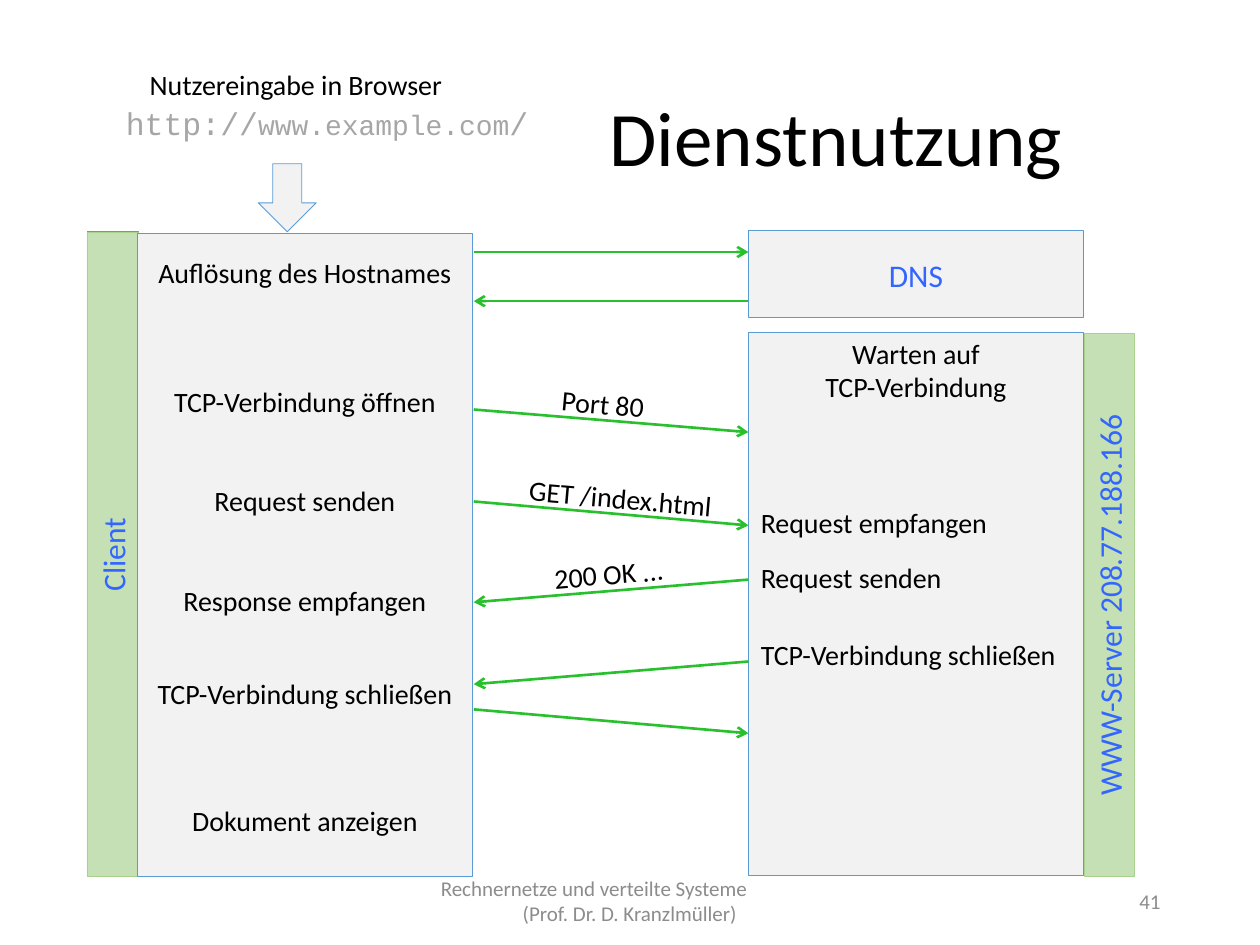
from pptx import Presentation
from pptx.dml.color import RGBColor
from pptx.enum.shapes import MSO_CONNECTOR as Link, MSO_SHAPE as Shape
from pptx.enum.text import MSO_ANCHOR as Anchor, MSO_AUTO_SIZE as Fit, PP_ALIGN as Align
from pptx.oxml.ns import qn
from pptx.util import Inches, Pt
from lxml.etree import SubElement

COLORS = {
    "black": "000000", "blue": "3366FF", "gray": "A6A6A6", "foot": "8C8C8C",
    "panel": "F2F2F2", "edge": "5B9BD5", "bar": "C5E0B4", "rim": "A9D18E",
    "arrow": "29C02E",
}
LEFT, RIGHT, COL = 1.09, 5.94, 2.66
GAP = 3.76
LINE_H = 0.37

# text, left indent
FOOT = [
    ("Rechnernetze und verteilte Systeme", 0.09),
    ("(Prof. Dr. D. Kranzlmüller)", 0.74),
]
PANELS = [
    (Shape.RECTANGLE, 0.69, 1.84, 0.41, 5.11),
    (Shape.RECTANGLE, LEFT, 1.85, COL, 5.11),
    (Shape.DOWN_ARROW, 2.05, 1.3, 0.46, 0.54),
    (Shape.RECTANGLE, RIGHT, 2.64, COL, 4.31),
    (Shape.RECTANGLE, RIGHT, 1.83, COL, 0.69),
]
BARS = [
    ("Client", -1.66, 4.2, 5.11, 0.4),
    ("WWW-Server 208.77.188.166", 6.65, 4.6, 4.31, 0.4),
]
CLIENT = [
    ("Auflösung des Hostnames", 1.98),
    ("TCP-Verbindung öffnen", 3),
    ("Request senden", 3.79),
    ("Response empfangen", 4.58),
    ("TCP-Verbindung schließen", 5.32),
    ("Dokument anzeigen", 6.33),
]
SERVER = [
    ("Request empfangen", 3.96),
    ("Request senden", 4.4),
    ("TCP-Verbindung schließen", 5.01),
]
LABELS = [
    ("Port 80", 4.36, 3.02, 0.87, 5.2),
    ("GET /index.html", 4.1, 3.77, 1.68, 5),
    ("200 OK ...", 4.3, 4.37, 1.08, 355.4),
]
# start height, end height, runs towards the server
ARROWS = [
    (2, 2, True), (2.39, 2.39, False), (3.25, 3.43, True), (3.98, 4.17, True),
    (4.6, 4.78, False), (5.25, 5.43, False), (5.63, 5.82, True),
]


def rgb(name):
    return RGBColor.from_string(COLORS[name])


def write(shape, lines, size=16, color="black", align=Align.LEFT,
          font="Calibri", **frame):
    """Fill a shape with lines; a line is a string or a list of (text, size)."""
    box = shape.text_frame
    form = {"word_wrap": True, "auto_size": Fit.SHAPE_TO_FIT_TEXT,
            "vertical_anchor": Anchor.TOP, **frame}
    for key, value in form.items():
        setattr(box, key, value)
    for i, line in enumerate(lines):
        para = box.add_paragraph() if i else box.paragraphs[0]
        para.alignment = align
        for text, pts in [(line, size)] if isinstance(line, str) else line:
            run = para.add_run()
            run.text = text
            run.font.name, run.font.size = font, Pt(pts)
            run.font.color.rgb = rgb(color)
    return box


def add_text(slide, lines, x, y, w, h, turn=0, **form):
    shape = slide.shapes.add_textbox(*map(Inches, (x, y, w, h)))
    shape.rotation = turn
    return write(shape, lines, **form)


def add_panel(slide, kind, x, y, w, h, fill="panel", edge="edge", width=0.5):
    shape = slide.shapes.add_shape(kind, *map(Inches, (x, y, w, h)))
    shape.shadow.inherit = False
    shape.fill.solid()
    shape.fill.fore_color.rgb = rgb(fill)
    shape.line.color.rgb = rgb(edge)
    shape.line.width = Pt(width)
    return shape


def add_arrow(slide, start, end, ahead):
    x1, x2 = (GAP, RIGHT) if ahead else (RIGHT, GAP)
    arrow = slide.shapes.add_connector(
        Link.STRAIGHT, *map(Inches, (x1, start, x2, end)))
    arrow.line.color.rgb = rgb("arrow")
    arrow.line.width = Pt(1.5)
    SubElement(arrow.line._get_or_add_ln(), qn("a:tailEnd"), type="arrow")
    SubElement(arrow._element.spPr, qn("a:effectLst"))


def main():
    deck = Presentation()
    deck.slide_width, deck.slide_height = Inches(10), Inches(7.5)
    slide = deck.slides.add_slide(deck.slide_layouts[6])
    fixed = {"auto_size": Fit.NONE, "vertical_anchor": Anchor.MIDDLE}

    title = add_text(slide, ["Dienstnutzung"], 4.74, 0.4, 4.57, 1.45,
                     size=44, **fixed)
    title.paragraphs[0].line_spacing = 0.9
    foot = add_text(slide, [text for text, _ in FOOT], 3.31, 6.95, 3.38, 0.4,
                    size=12, color="foot", **fixed)
    for para, (_, indent) in zip(foot.paragraphs, FOOT):
        para._p.get_or_add_pPr().set("marL", str(Inches(indent)))
    add_text(slide, ["41"], 7.06, 6.95, 2.25, 0.4, size=12, color="foot",
             align=Align.RIGHT, **fixed)
    add_text(slide, ["Nutzereingabe in Browser"], LEFT, 0.49, 2.57, LINE_H,
             word_wrap=False)
    add_text(slide, [[("http://", 18), ("www.example.com", 16), ("/", 18)]],
             0.9, 0.78, 3.43, 0.4, color="gray", font="Courier New",
             word_wrap=False)

    first, *rest = PANELS
    add_panel(slide, *first)
    for name, *place in BARS:
        bar = add_panel(slide, Shape.RECTANGLE, *place, "bar", "rim", 0.75)
        bar.rotation = 270
        write(bar, [name], size=18, color="blue", align=Align.CENTER)
    for panel in rest:
        add_panel(slide, *panel)

    for step, y in CLIENT:
        add_text(slide, [step], LEFT, y, COL, LINE_H, align=Align.CENTER)
    add_text(slide, ["DNS"], RIGHT, 1.98, COL, 0.4, size=18, color="blue",
             align=Align.CENTER, vertical_anchor=Anchor.MIDDLE)
    add_text(slide, ["Warten auf", "TCP-Verbindung"], RIGHT, 2.62, COL, 0.64,
             align=Align.CENTER)
    for step, y in SERVER:
        add_text(slide, [step], RIGHT, y, COL, LINE_H)
    for label, x, y, w, turn in LABELS:
        add_text(slide, [label], x, y, w, LINE_H, turn, word_wrap=False)
    for arrow in ARROWS:
        add_arrow(slide, *arrow)

    deck.save("out.pptx")


if __name__ == "__main__":
    main()
